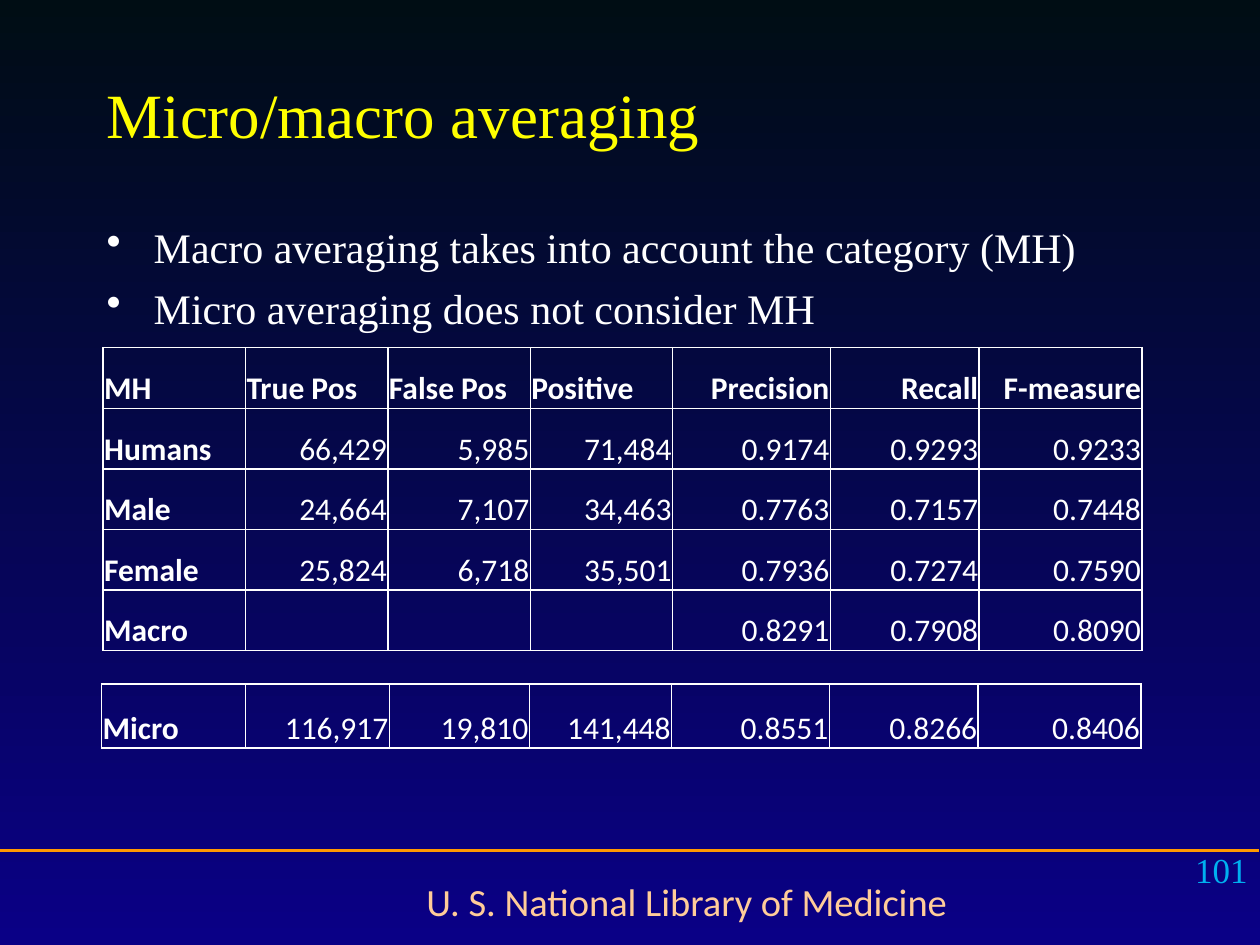
from lxml import etree
from pptx import Presentation
from pptx.dml.color import RGBColor
from pptx.enum.shapes import MSO_CONNECTOR
from pptx.enum.text import MSO_ANCHOR, PP_ALIGN
from pptx.oxml.ns import qn
from pptx.util import Cm, Pt

LEFT, CENTER, RIGHT = PP_ALIGN.LEFT, PP_ALIGN.CENTER, PP_ALIGN.RIGHT
TOP, BOTTOM = MSO_ANCHOR.TOP, MSO_ANCHOR.BOTTOM
STRAIGHT = MSO_CONNECTOR.STRAIGHT
SERIF, SANS = "Times New Roman", "Calibri"
WHITE = "FFFFFF"

BULLETS = [
    "Macro averaging takes into account the category (MH)",
    "Micro averaging does not consider MH",
]
CATEGORY_ROWS = [
    ["MH", "True Pos", "False Pos", "Positive", "Precision", "Recall", "F-measure"],
    ["Humans", "66,429", "5,985", "71,484", "0.9174", "0.9293", "0.9233"],
    ["Male", "24,664", "7,107", "34,463", "0.7763", "0.7157", "0.7448"],
    ["Female", "25,824", "6,718", "35,501", "0.7936", "0.7274", "0.7590"],
    ["Macro", "", "", "", "0.8291", "0.7908", "0.8090"],
]
MICRO_ROWS = [["Micro", "116,917", "19,810", "141,448", "0.8551", "0.8266", "0.8406"]]
MEASURE_WIDTHS = [3.18, 3, 3.28]


def color(value):
    return RGBColor.from_string(value)


def add_run(paragraph, text, size, font, fill, bold=False):
    run = paragraph.add_run()
    run.text = text
    run.font.size = Pt(size)
    run.font.name = font
    run.font.bold = bold
    run.font.color.rgb = color(fill)


def add_text_box(slide, box, anchor=TOP):
    frame = slide.shapes.add_textbox(*map(Cm, box)).text_frame
    frame.word_wrap = True
    frame.vertical_anchor = anchor
    return frame


def add_line_of_text(slide, box, text, size, font, fill, align=LEFT, anchor=TOP):
    paragraph = add_text_box(slide, box, anchor).paragraphs[0]
    paragraph.alignment = align
    add_run(paragraph, text, size, font, fill)


def add_bullets(slide, box, items):
    frame = add_text_box(slide, box)
    for index, item in enumerate(items):
        paragraph = frame.add_paragraph() if index else frame.paragraphs[0]
        properties = paragraph._p.get_or_add_pPr()
        properties.set("marL", str(Cm(0.95)))
        properties.set("indent", str(-Cm(0.95)))
        bullet = etree.SubElement(properties, qn("a:buChar"))
        bullet.set("char", "•")
        if index:
            paragraph.space_before = Pt(6)
        add_run(paragraph, item, 24, SERIF, WHITE)


def set_borders(cell, fill, width):
    properties = cell._tc.get_or_add_tcPr()
    for index, side in enumerate(("a:lnL", "a:lnR", "a:lnT", "a:lnB")):
        line = etree.Element(qn(side), w=str(Pt(width)))
        solid = etree.SubElement(line, qn("a:solidFill"))
        etree.SubElement(solid, qn("a:srgbClr"), val=fill)
        properties.insert(index, line)


def fill_cell(cell, text, align, bold):
    cell.margin_left = cell.margin_right = cell.margin_top = Cm(0.02)
    cell.margin_bottom = Cm(0)
    cell.vertical_anchor = BOTTOM
    cell.fill.background()
    set_borders(cell, WHITE, 1)
    if text:
        paragraph = cell.text_frame.paragraphs[0]
        paragraph.alignment = align
        add_run(paragraph, text, 18, SANS, WHITE, bold)


def add_score_table(slide, left, top, widths, row_height, rows, header=False):
    table = slide.shapes.add_table(
        len(rows), len(widths), Cm(left), Cm(top),
        Cm(sum(widths)), Cm(row_height * len(rows))).table
    table.first_row = table.horz_banding = False
    for column, width in zip(table.columns, widths):
        column.width = Cm(width)
    for r, row in enumerate(rows):
        table.rows[r].height = Cm(row_height)
        for c, text in enumerate(row):
            is_header = header and r == 0
            # Labels and count headings sit left, all figures sit right
            align = LEFT if c == 0 or (is_header and c < 4) else RIGHT
            fill_cell(table.cell(r, c), text, align, is_header or c == 0)


def add_footer(slide, left, top, width):
    rule = slide.shapes.add_connector(
        STRAIGHT, Cm(left), Cm(top), Cm(left + width), Cm(top))
    rule.line.color.rgb = color("FF9900")
    rule.line.width = Pt(1.5)
    etree.SubElement(rule._element.spPr, qn("a:effectLst"))
    add_line_of_text(slide, (left + 5.9, top + 0.43, 15.93, 1.19),
                     "U. S. National Library of Medicine", 22, SANS, "FFCC99", CENTER)
    add_line_of_text(slide, (left + width - 5.9, top - 0.15, 5.92, 1.32),
                     "101", 20, SERIF, "00B0F0", RIGHT)


def set_background(slide):
    fill = slide.background.fill
    fill.gradient()
    fill.gradient_angle = 270
    for stop, value in zip(fill.gradient_stops, ("000D14", "0A0086")):
        stop.color.rgb = color(value)


def main():
    presentation = Presentation()
    presentation.slide_width, presentation.slide_height = Cm(25.4), Cm(19.05)
    slide = presentation.slides.add_slide(presentation.slide_layouts[6])
    set_background(slide)

    # Footer rule, organisation and page number
    add_footer(slide, -0.02, 17.14, 25.4)

    # Title and bullets
    add_line_of_text(slide, (1.9, 1.27, 21.59, 1.9), "Micro/macro averaging",
                     36, SERIF, "FFFF00", anchor=BOTTOM)
    add_bullets(slide, (1.9, 4.34, 21.59, 12.6), BULLETS)

    # Scores per category, then the pooled scores
    add_score_table(slide, 2.08, 7.01, [2.87] * 4 + MEASURE_WIDTHS, 1.22,
                    CATEGORY_ROWS, header=True)
    add_score_table(slide, 2.05, 13.79, [2.9, 2.9, 2.82, 2.87] + MEASURE_WIDTHS,
                    1.29, MICRO_ROWS)

    presentation.save("out.pptx")


if __name__ == "__main__":
    main()
